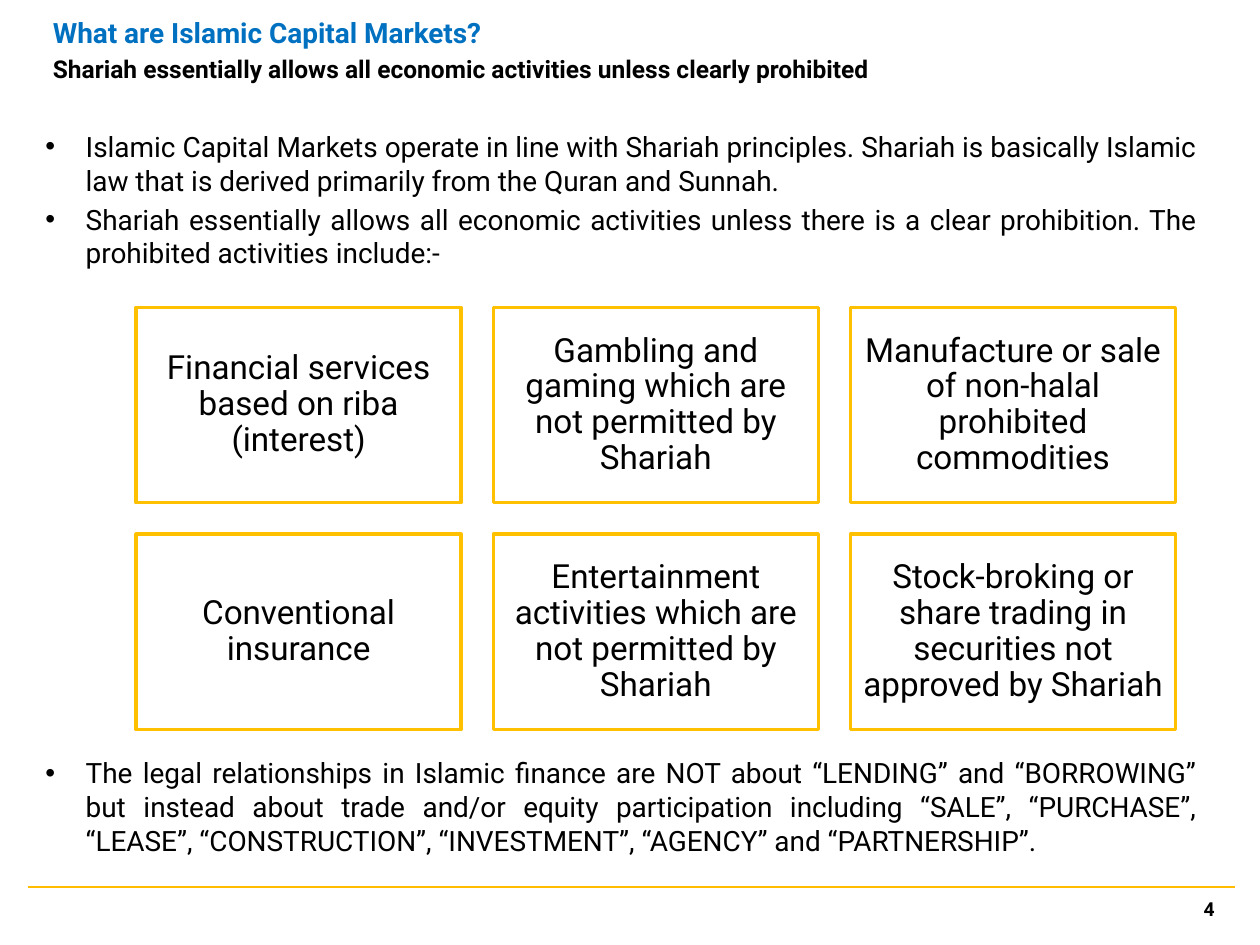
from lxml import etree
from pptx import Presentation
from pptx.dml.color import RGBColor
from pptx.enum.shapes import MSO_CONNECTOR, MSO_SHAPE
from pptx.enum.text import MSO_ANCHOR, PP_ALIGN
from pptx.oxml.ns import qn
from pptx.util import Inches, Pt

COLORS = {"text": "000000", "title": "0070C0", "box": "FFC000", "rule": "FFBC00"}

prs = Presentation()
prs.slide_width, prs.slide_height = Inches(10), Inches(7.5)
slide = prs.slides.add_slide(prs.slide_layouts[6])


def set_frame(shape, inset_x, inset_y, anchor=MSO_ANCHOR.MIDDLE):
    """Wrap the text of a shape and set its insets and anchor."""
    frame = shape.text_frame
    frame.word_wrap = True
    frame.margin_left = frame.margin_right = Inches(inset_x)
    frame.margin_top = frame.margin_bottom = Inches(inset_y)
    frame.vertical_anchor = anchor
    return frame


def write(paragraph, text, size, align, color="text", bold=False):
    paragraph.alignment = align
    run = paragraph.add_run()
    run.text = text
    run.font.name = "Roboto"
    run.font.size = Pt(size)
    run.font.bold = bold
    run.font.color.rgb = RGBColor.from_string(COLORS[color])


# Footer rule and page number
rule = slide.shapes.add_connector(
    MSO_CONNECTOR.STRAIGHT, Inches(0.22), Inches(7.04), Inches(9.8), Inches(7.04))
rule.line.color.rgb = RGBColor.from_string(COLORS["rule"])
rule.line.width = Pt(1.5)
etree.SubElement(rule._element.spPr, qn("a:effectLst"))

page_number = slide.shapes.add_textbox(Inches(7.41), Inches(7.01), Inches(2.33), Inches(0.4))
write(set_frame(page_number, 0.1, 0.05).paragraphs[0], "4", 11, PP_ALIGN.RIGHT, bold=True)

# Heading
heading = set_frame(
    slide.shapes.add_textbox(Inches(0.42), Inches(0.04), Inches(7.43), Inches(0.7)), 0, 0)
write(heading.paragraphs[0], "What are Islamic Capital Markets?", 16, PP_ALIGN.LEFT,
      "title", bold=True)
subtitle = heading.add_paragraph()
subtitle.space_before = Pt(2.8)
write(subtitle, "Shariah essentially allows all economic activities unless clearly prohibited",
      14, PP_ALIGN.LEFT, bold=True)

# Bullets above and below the grid: top, height, texts
bullet_blocks = [
    (0.98, 1.3, [
        "Islamic Capital Markets operate in line with Shariah principles. Shariah is "
        "basically Islamic law that is derived primarily from the Quran and Sunnah.",
        "Shariah essentially allows all economic activities unless there is a clear "
        "prohibition. The prohibited activities include:-",
    ]),
    (5.95, 0.95, [
        "The legal relationships in Islamic finance are NOT about “LENDING” and “BORROWING” "
        "but instead about trade and/or equity participation including “SALE”, “PURCHASE”, "
        "“LEASE”, “CONSTRUCTION”, “INVESTMENT”, “AGENCY” and “PARTNERSHIP”.",
    ]),
]
for top, height, bullets in bullet_blocks:
    block = set_frame(
        slide.shapes.add_textbox(Inches(0.27), Inches(top), Inches(9.32), Inches(height)),
        0.09, 0.05, MSO_ANCHOR.TOP)
    for index, bullet in enumerate(bullets):
        paragraph = block.add_paragraph() if index else block.paragraphs[0]
        properties = paragraph._p.get_or_add_pPr()
        properties.set("marL", str(Inches(0.32)))
        properties.set("indent", str(-Inches(0.32)))
        etree.SubElement(properties, qn("a:buFont"), typeface="Arial")
        etree.SubElement(properties, qn("a:buChar"), char="•")
        if index:
            paragraph.space_before = Pt(3.2)
        write(paragraph, bullet, 16, PP_ALIGN.JUSTIFY)

# Grid of prohibited activities
prohibited_activities = [
    "Financial services based on riba (interest)",
    "Gambling and gaming which are not permitted by Shariah",
    "Manufacture or sale of non-halal prohibited commodities",
    "Conventional insurance",
    "Entertainment activities which are not permitted by Shariah",
    "Stock-broking or share trading in securities not approved by Shariah",
]
for index, activity in enumerate(prohibited_activities):
    row, column = divmod(index, 3)
    box = slide.shapes.add_shape(
        MSO_SHAPE.RECTANGLE, Inches(1.08 + column * 2.835), Inches(2.44 + row * 1.8),
        Inches(2.58), Inches(1.55))
    box.shadow.inherit = False
    box.fill.background()
    box.line.color.rgb = RGBColor.from_string(COLORS["box"])
    box.line.width = Pt(2)
    label = set_frame(box, 0.08, 0.08).paragraphs[0]
    label.line_spacing = 0.9
    write(label, activity, 19, PP_ALIGN.CENTER)

prs.save("out.pptx")
